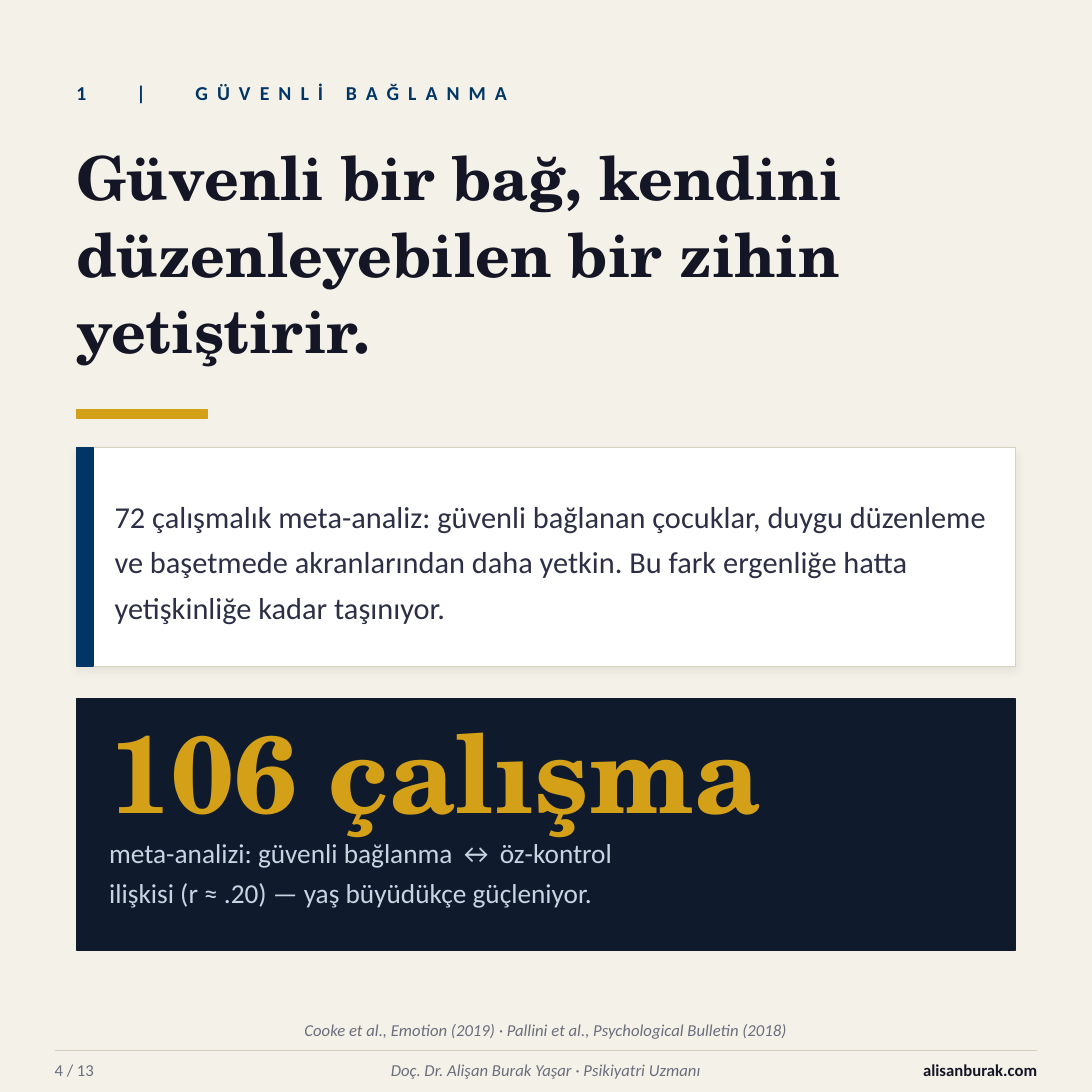
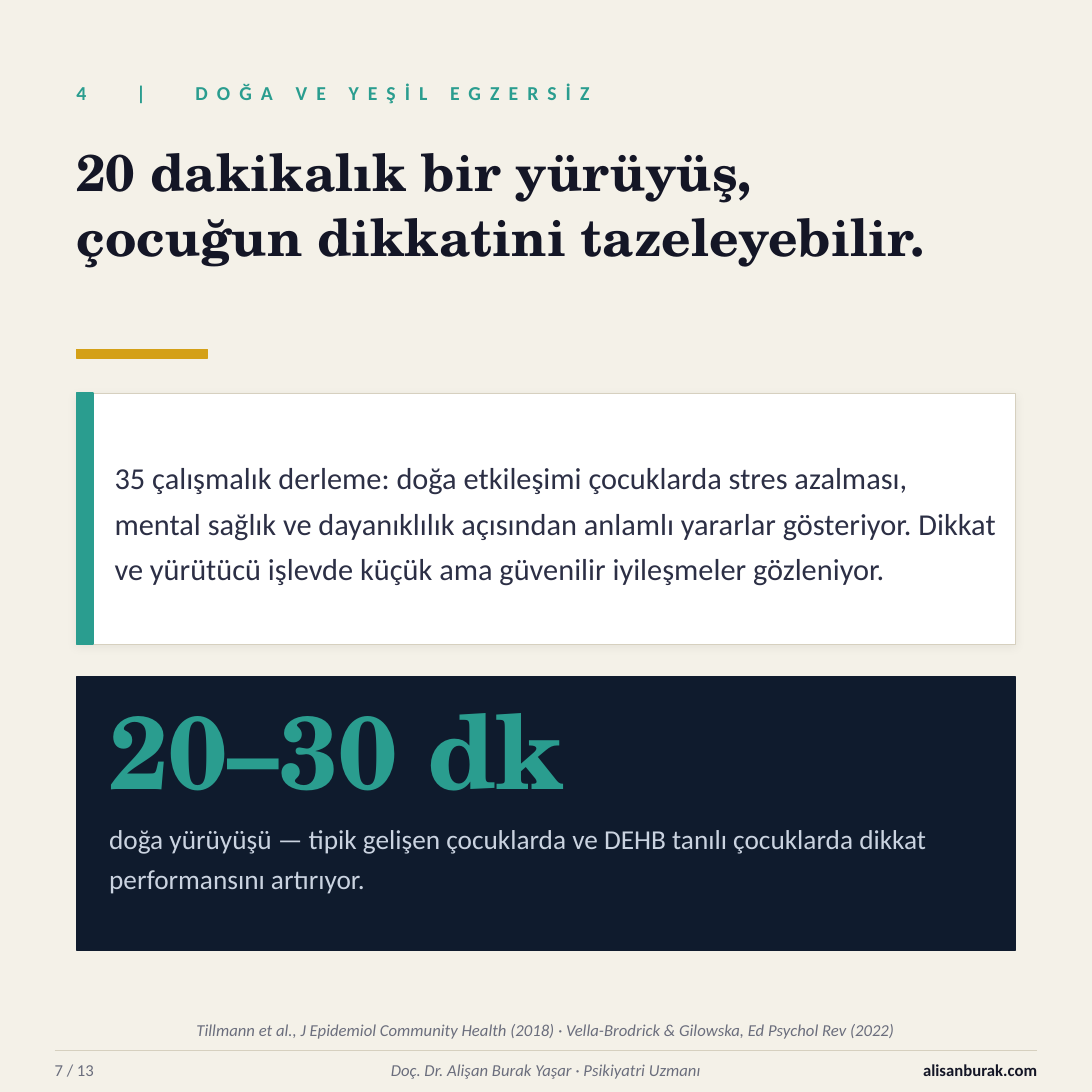
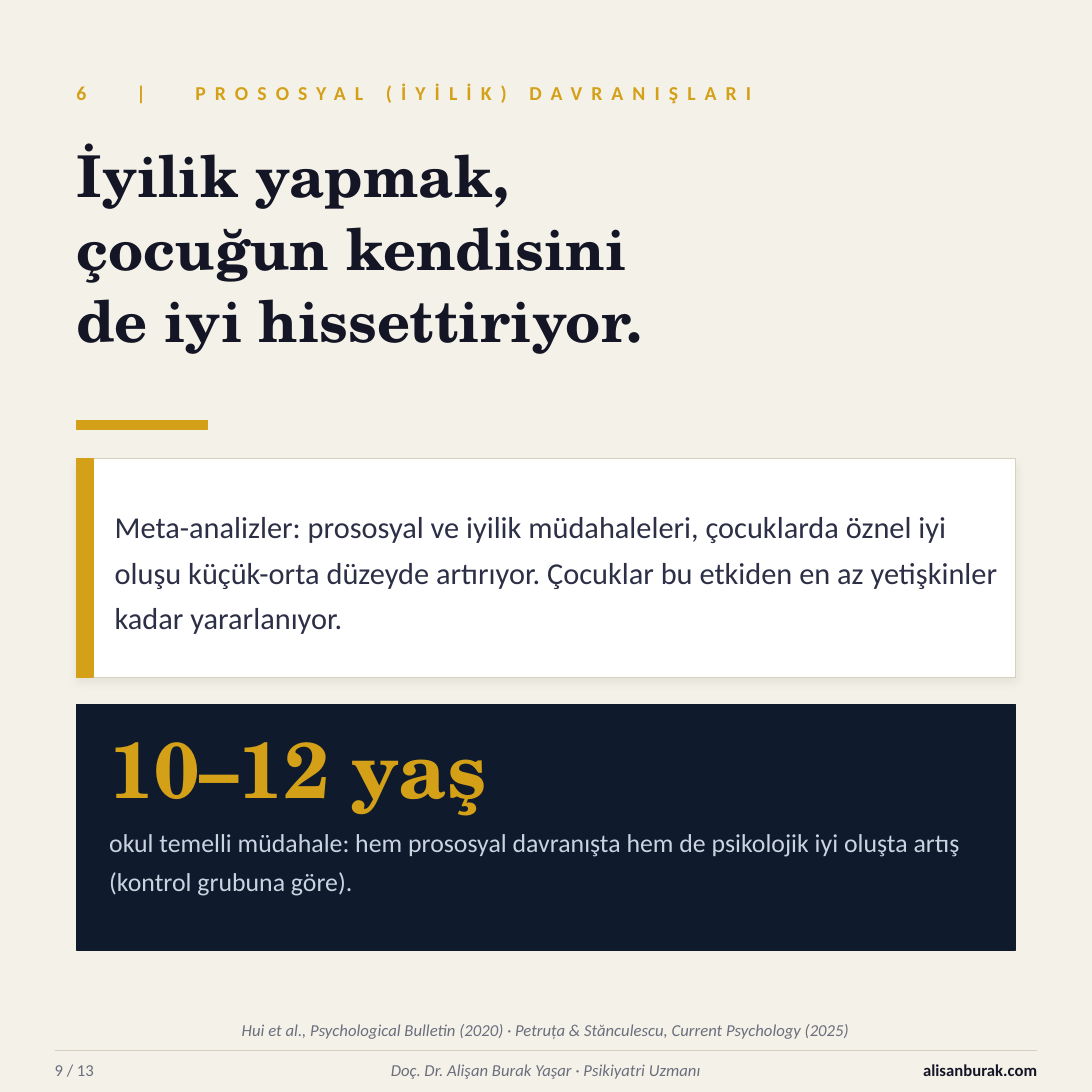
"""Build three square slides on what supports children's development."""
from lxml.etree import SubElement
from pptx import Presentation
from pptx.dml.color import RGBColor
from pptx.enum.shapes import MSO_CONNECTOR, MSO_SHAPE
from pptx.enum.text import MSO_ANCHOR as Anchor, MSO_AUTO_SIZE, PP_ALIGN as Align
from pptx.oxml.ns import qn
from pptx.util import Inches, Pt

PAPER, WHITE, INK, BODY = "F4F1E8", "FFFFFF", "141626", "2C2F45"
NAVY, TEAL, GOLD = "003566", "2A9D8F", "D4A017"
PANEL, PALE, MUTED, BORDER = "0F1B2D", "CAD3E0", "6B6E7D", "D6D0BF"
SANS, SERIF = "Calibri", "TeX Gyre Schola"

LEFT, WIDTH = 0.7, 8.6
TITLE_TOP, PANEL_BOTTOM, PADDING = 1.25, 8.7, 0.15
FOOTER_LEFT, FOOTER_RIGHT, FOOTER_TOP = 0.5, 9.5, 9.65
TAB_STOPS = (0.55, 1.09)
PAGE_COUNT = 13
AUTHOR = "Doç. Dr. Alişan Burak Yaşar · Psikiyatri Uzmanı"
SITE = "alisanburak.com"

SLIDES = [
    {
        "page": 4, "accent": NAVY,
        "kicker": ("1", "GÜVENLİ BAĞLANMA"),
        "title": ["Güvenli bir bağ, kendini", "düzenleyebilen bir zihin", "yetiştirir."],
        "title_size": 40, "title_height": 2.4, "rule_top": 3.75,
        "card_top": 4.1, "card_height": 2,
        "finding": "72 çalışmalık meta-analiz: güvenli bağlanan çocuklar, duygu düzenleme "
                   "ve başetmede akranlarından daha yetkin. Bu fark ergenliğe hatta "
                   "yetişkinliğe kadar taşınıyor.",
        "panel_top": 6.4, "figure": "106 çalışma",
        "figure_size": 72, "figure_height": 1, "figure_color": GOLD,
        "caption": ["meta-analizi: güvenli bağlanma ↔ öz-kontrol",
                    "ilişkisi (r ≈ .20) — yaş büyüdükçe güçleniyor."],
        "caption_top": 7.6, "caption_height": 0.9,
        "caption_size": 18, "caption_spacing": 1.2,
        "source": "Cooke et al., Emotion (2019) · Pallini et al., Psychological Bulletin (2018)",
    },
    {
        "page": 7, "accent": TEAL,
        "kicker": ("4", "DOĞA VE YEŞİL EGZERSİZ"),
        "title": ["20 dakikalık bir yürüyüş,", "çocuğun dikkatini tazeleyebilir."],
        "title_size": 34, "title_height": 1.8, "rule_top": 3.2,
        "card_top": 3.6, "card_height": 2.3,
        "finding": "35 çalışmalık derleme: doğa etkileşimi çocuklarda stres azalması, mental "
                   "sağlık ve dayanıklılık açısından anlamlı yararlar gösteriyor. Dikkat ve "
                   "yürütücü işlevde küçük ama güvenilir iyileşmeler gözleniyor.",
        "panel_top": 6.2, "figure": "20–30 dk",
        "figure_size": 68, "figure_height": 1, "figure_color": TEAL,
        "caption": ["doğa yürüyüşü — tipik gelişen çocuklarda ve DEHB tanılı çocuklarda "
                    "dikkat performansını artırıyor."],
        "caption_top": 7.45, "caption_height": 1.15,
        "caption_size": 18, "caption_spacing": 1.25,
        "source": "Tillmann et al., J Epidemiol Community Health (2018) · "
                  "Vella-Brodrick & Gilowska, Ed Psychol Rev (2022)",
    },
    {
        "page": 9, "accent": GOLD,
        "kicker": ("6", "PROSOSYAL (İYİLİK) DAVRANIŞLARI"),
        "title": ["İyilik yapmak,", "çocuğun kendisini", "de iyi hissettiriyor."],
        "title_size": 38, "title_height": 2.5, "rule_top": 3.85,
        "card_top": 4.2, "card_height": 2,
        "finding": "Meta-analizler: prososyal ve iyilik müdahaleleri, çocuklarda öznel iyi "
                   "oluşu küçük-orta düzeyde artırıyor. Çocuklar bu etkiden en az "
                   "yetişkinler kadar yararlanıyor.",
        "panel_top": 6.45, "figure": "10–12 yaş",
        "figure_size": 52, "figure_height": 0.85, "figure_color": GOLD,
        "caption": ["okul temelli müdahale: hem prososyal davranışta hem de psikolojik iyi "
                    "oluşta artış (kontrol grubuna göre)."],
        "caption_top": 7.5, "caption_height": 1.1,
        "caption_size": 17, "caption_spacing": 1.25,
        "source": "Hui et al., Psychological Bulletin (2020) · "
                  "Petruța & Stănculescu, Current Psychology (2025)",
    },
]


def rgb(color):
    return RGBColor.from_string(color)


def write(shape, lines, size, color, font=SANS, bold=False, italic=False,
          align=Align.LEFT, anchor=Anchor.MIDDLE, spacing=None):
    frame = shape.text_frame
    frame.word_wrap = True
    frame.auto_size = MSO_AUTO_SIZE.NONE
    frame.vertical_anchor = anchor
    frame.margin_left = frame.margin_right = frame.margin_top = frame.margin_bottom = 0
    frame.text = "\n".join(lines)
    for paragraph in frame.paragraphs:
        paragraph.alignment = align
        paragraph.line_spacing = spacing
        for run in paragraph.runs:
            run.font.name, run.font.size = font, Pt(size)
            run.font.bold, run.font.italic = bold, italic
            run.font.color.rgb = rgb(color)


def add_text(slide, box, lines, size, color, **style):
    shape = slide.shapes.add_textbox(*map(Inches, box))
    write(shape, lines, size, color, **style)
    return shape


def add_block(slide, box, fill, line=None, line_width=1):
    shape = slide.shapes.add_shape(MSO_SHAPE.RECTANGLE, *map(Inches, box))
    shape.shadow.inherit = False
    shape.fill.solid()
    shape.fill.fore_color.rgb = rgb(fill)
    shape.line.color.rgb = rgb(line or fill)
    shape.line.width = Pt(line_width)
    return shape


def add_soft_shadow(shape):
    effects = shape._element.spPr.find(qn("a:effectLst"))
    shadow = SubElement(effects, qn("a:outerShdw"), blurRad=str(Pt(6)), dist=str(Pt(2)),
                        dir="5400000", algn="ctr", rotWithShape="0")
    color = SubElement(shadow, qn("a:srgbClr"), val="000000")
    SubElement(color, qn("a:alpha"), val="6000")


def add_kicker(slide, parts, color):
    number, topic = parts
    shape = add_text(slide, (LEFT, 0.65, WIDTH, 0.4), [f"{number}\t|\t{topic}"],
                     13, color, bold=True)
    paragraph = shape.text_frame.paragraphs[0]
    tabs = SubElement(paragraph._p.get_or_add_pPr(), qn("a:tabLst"))
    for stop in TAB_STOPS:
        SubElement(tabs, qn("a:tab"), pos=str(Inches(stop)), algn="l")
    for run in paragraph.runs:
        run._r.get_or_add_rPr().set("spc", "600")


def set_title(slide, content):
    title = slide.shapes.title
    title.left, title.top = Inches(LEFT), Inches(TITLE_TOP)
    title.width, title.height = Inches(WIDTH), Inches(content["title_height"])
    write(title, content["title"], content["title_size"], INK, font=SERIF, bold=True,
          anchor=Anchor.TOP, spacing=1.05)


def add_card(slide, content):
    top, height = content["card_top"], content["card_height"]
    add_soft_shadow(add_block(slide, (LEFT, top, WIDTH, height), WHITE, BORDER, 0.5))
    add_block(slide, (LEFT, top, 0.15, height), content["accent"])
    add_text(slide, (1.05, top + PADDING, 8.1, height - 2 * PADDING),
             [content["finding"]], 20, BODY, spacing=1.25)


def add_panel(slide, content):
    top = content["panel_top"]
    add_block(slide, (LEFT, top, WIDTH, PANEL_BOTTOM - top), PANEL)
    add_text(slide, (1, top + PADDING, 8, content["figure_height"]), [content["figure"]],
             content["figure_size"], content["figure_color"], font=SERIF, bold=True)
    add_text(slide, (1, content["caption_top"], 8, content["caption_height"]),
             content["caption"], content["caption_size"], PALE,
             anchor=Anchor.TOP, spacing=content["caption_spacing"])


def add_footer(slide, source, page):
    add_text(slide, (FOOTER_LEFT, 9.28, FOOTER_RIGHT - FOOTER_LEFT, 0.3), [source],
             11, MUTED, italic=True, align=Align.CENTER)
    line = slide.shapes.add_connector(
        MSO_CONNECTOR.STRAIGHT, *map(Inches, (FOOTER_LEFT, 9.62, FOOTER_RIGHT, 9.62)))
    line.line.color.rgb = rgb(BORDER)
    line.line.width = Pt(0.75)
    SubElement(line._element.spPr, qn("a:effectLst"))
    cells = [
        (FOOTER_LEFT, 1.5, f"{page} / {PAGE_COUNT}", MUTED, {}),
        (2, 6, AUTHOR, MUTED, {"italic": True, "align": Align.CENTER}),
        (8, 1.5, SITE, INK, {"bold": True, "align": Align.RIGHT}),
    ]
    for left, width, text, color, style in cells:
        add_text(slide, (left, FOOTER_TOP, width, 0.3), [text], 11, color, **style)


def main():
    presentation = Presentation()
    presentation.slide_width = presentation.slide_height = Inches(10)
    background = presentation.slide_master.background.fill
    background.solid()
    background.fore_color.rgb = rgb(PAPER)
    title_only = presentation.slide_layouts.get_by_name("Title Only")
    for content in SLIDES:
        slide = presentation.slides.add_slide(title_only)
        add_kicker(slide, content["kicker"], content["accent"])
        set_title(slide, content)
        add_block(slide, (LEFT, content["rule_top"], 1.2, 0.08), GOLD)
        add_card(slide, content)
        add_panel(slide, content)
        add_footer(slide, content["source"], content["page"])
    presentation.save("out.pptx")


if __name__ == "__main__":
    main()
